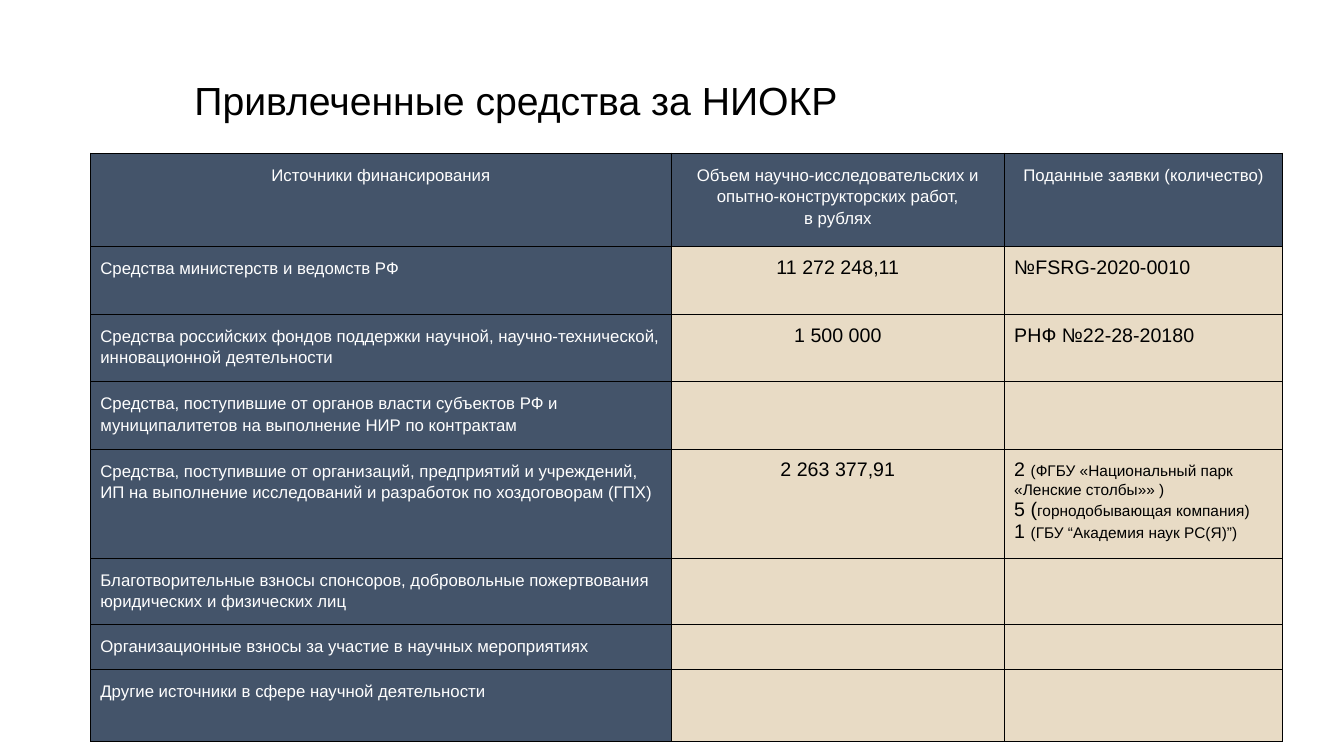
from lxml import etree
from pptx import Presentation
from pptx import util as u
from pptx.dml.color import RGBColor
from pptx.enum import text as t
from pptx.oxml.ns import qn

FONT = "Arial"
COLORS = {"black": "000000", "white": "FFFFFF", "slate": "44546A", "sand": "E8DBC5"}
INSET = u.Cm(0.25)
COLUMN_WIDTHS = [14.64, 8.39, 7.02]
ROW_HEIGHTS = [2.36, 1.7, 1.7, 1.7, 2.16, 1.68, 1.12, 1.83]

HEADERS = [
    ["Источники финансирования"],
    ["Объем научно-исследовательских и опытно-конструкторских работ,", "в рублях"],
    ["Поданные заявки (количество)"],
]
# Source, amount, and applications as paragraphs of (text, size) runs
FUNDING = [
    ("Средства министерств и ведомств РФ",
     "11 272 248,11", [[("№FSRG-2020-0010", 14)]]),
    ("Средства российских фондов поддержки научной, научно-технической, "
     "инновационной деятельности",
     "1 500 000", [[("РНФ №22-28-20180", 14)]]),
    ("Средства, поступившие от органов власти субъектов РФ и муниципалитетов "
     "на выполнение НИР по контрактам", "", []),
    ("Средства, поступившие от организаций, предприятий и учреждений, "
     "ИП на выполнение исследований и разработок по хоздоговорам (ГПХ)",
     "2 263 377,91",
     [[("2 ", 14), ("(ФГБУ «Национальный парк «Ленские столбы»» )", 11)],
      [("5 (", 14), ("горнодобывающая компания)", 11)],
      [("1 ", 14), ("(ГБУ “Академия наук РС(Я)”)", 11)]]),
    ("Благотворительные взносы спонсоров, добровольные пожертвования "
     "юридических и физических лиц", "", []),
    ("Организационные взносы за участие в научных мероприятиях", "", []),
    ("Другие источники в сфере научной деятельности", "", []),
]


def write(frame, paragraphs, color="black", align=t.PP_ALIGN.LEFT, spacing=1.0):
    """Fill a text frame with paragraphs, each a list of (text, size) runs."""
    for index, runs in enumerate(paragraphs):
        para = frame.paragraphs[0] if index == 0 else frame.add_paragraph()
        para.alignment = align
        para.line_spacing = spacing
        for words, size in runs:
            span = para.add_run()
            span.text = words
            span.font.name = FONT
            span.font.size = u.Pt(size)
            span.font.color.rgb = RGBColor.from_string(COLORS[color])
    if not paragraphs:
        # Keeps an empty cell from stretching its row
        etree.SubElement(frame.paragraphs[0]._p, qn("a:endParaRPr"), sz="1200")


def add_borders(cell):
    properties = cell._tc.get_or_add_tcPr()
    for position, side in enumerate(("a:lnL", "a:lnR", "a:lnT", "a:lnB")):
        line = etree.Element(qn(side), w=str(u.Pt(0.75)))
        fill = etree.SubElement(line, qn("a:solidFill"))
        etree.SubElement(fill, qn("a:srgbClr"), val=COLORS["black"])
        properties.insert(position, line)


def format_cell(cell, fill):
    cell.margin_left = cell.margin_right = INSET
    cell.margin_top = cell.margin_bottom = INSET
    cell.vertical_anchor = t.MSO_ANCHOR.TOP
    cell.fill.solid()
    cell.fill.fore_color.rgb = RGBColor.from_string(COLORS[fill])
    add_borders(cell)


def add_title(page):
    box = page.shapes.add_textbox(u.Cm(4.65), u.Cm(1.63), u.Cm(22.66), u.Cm(2.82))
    box.text_frame.word_wrap = True
    write(box.text_frame, [[("Привлеченные средства за НИОКР", 28)]], spacing=1.15)


def add_funding_table(page):
    frame = page.shapes.add_table(
        len(ROW_HEIGHTS), len(COLUMN_WIDTHS), u.Cm(2.28), u.Cm(3.86),
        u.Cm(sum(COLUMN_WIDTHS)), u.Cm(sum(ROW_HEIGHTS)))
    table = frame.table
    for column, width in zip(table.columns, COLUMN_WIDTHS):
        column.width = u.Cm(width)
    for row, height in zip(table.rows, ROW_HEIGHTS):
        row.height = u.Cm(height)

    center = t.PP_ALIGN.CENTER
    for column, lines in enumerate(HEADERS):
        cell = table.cell(0, column)
        format_cell(cell, "slate")
        write(cell.text_frame, [[(line, 12)] for line in lines],
              color="white", align=center, spacing=1.15)
    for row, (source, amount, applications) in enumerate(FUNDING, start=1):
        source_cell, amount_cell, applications_cell = table.rows[row].cells
        format_cell(source_cell, "slate")
        format_cell(amount_cell, "sand")
        format_cell(applications_cell, "sand")
        write(source_cell.text_frame, [[(source, 12)]], color="white", spacing=1.15)
        write(amount_cell.text_frame, [[(amount, 14)]] if amount else [], align=center)
        write(applications_cell.text_frame, applications)


def main():
    deck = Presentation()
    deck.slide_width = u.Cm(33.87)
    deck.slide_height = u.Cm(19.05)
    page = deck.slides.add_slide(deck.slide_layouts[6])
    add_title(page)
    add_funding_table(page)
    deck.save("out.pptx")


if __name__ == "__main__":
    main()
